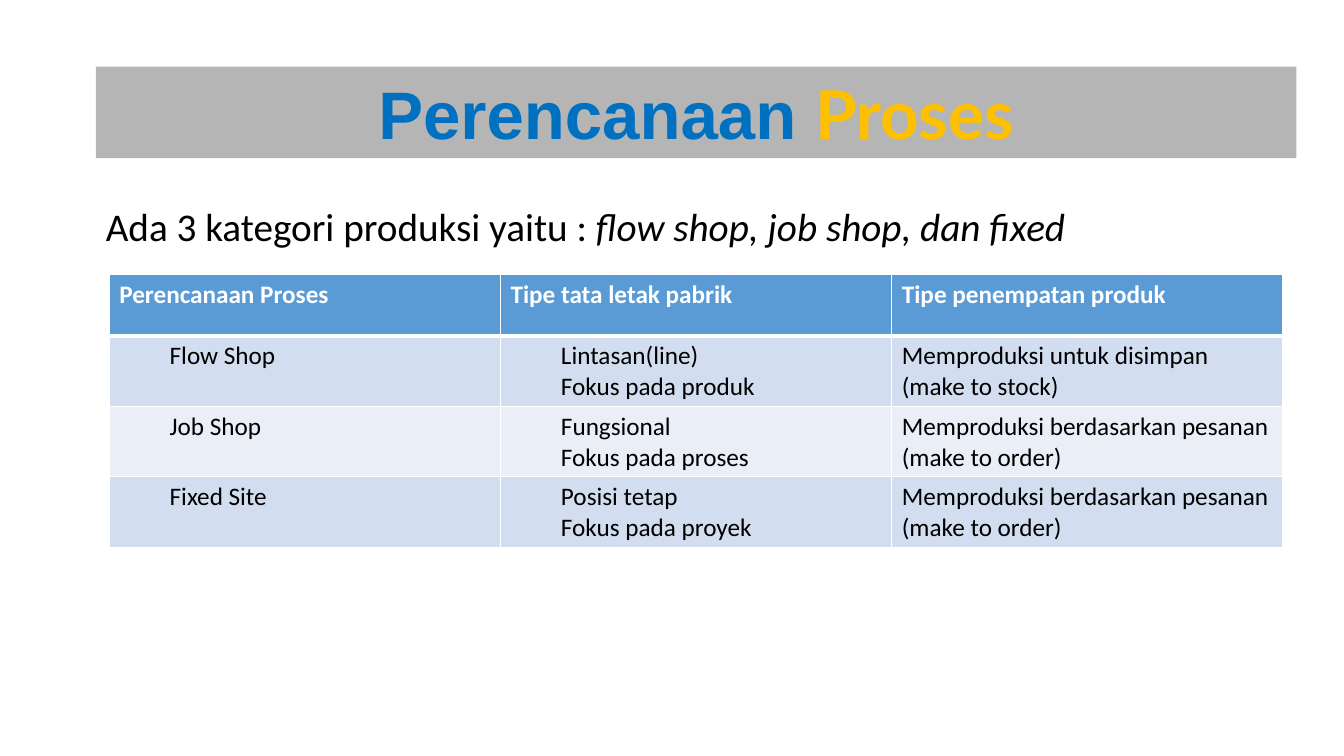
import dataclasses

import lxml.etree
import pptx
import pptx.dml.color
import pptx.enum.shapes
import pptx.enum.text
import pptx.oxml.ns
import pptx.util


@dataclasses.dataclass(frozen=True)
class Theme:
    black: str = "000000"
    white: str = "FFFFFF"
    blue: str = "0070C0"
    gold: str = "FFC000"
    header: str = "5B9BD5"
    bands: tuple = ("D2DEEF", "EAEFF7")
    title_size: int = 48
    lead_size: int = 28
    table_size: int = 18
    title_font: str = "Arial"
    accent_font: str = "Lato"
    body_font: str = "Calibri"


class SlideBuilder:
    def __init__(self, page, theme):
        self.page = page
        self.theme = theme

    def color(self, value):
        return pptx.dml.color.RGBColor.from_string(value)

    def frame(self, left, top, width, height):
        return [pptx.util.Pt(length) for length in (left, top, width, height)]

    def span(self, para, text, size, color, font=None, bold=False, italic=False):
        span = para.add_run()
        span.text = text
        span.font.name = font or self.theme.body_font
        span.font.size = pptx.util.Pt(size)
        span.font.color.rgb = self.color(color)
        span.font.bold = bold
        span.font.italic = italic

    def banner(self, place, fill, opacity):
        box = self.page.shapes.add_shape(
            pptx.enum.shapes.MSO_SHAPE.RECTANGLE, *self.frame(*place))
        box.shadow.inherit = False
        box.line.fill.background()
        box.fill.solid()
        box.fill.fore_color.rgb = self.color(fill)
        tint = box.fill._xPr.find(".//" + pptx.oxml.ns.qn("a:srgbClr"))
        alpha = lxml.etree.SubElement(tint, pptx.oxml.ns.qn("a:alpha"))
        alpha.set("val", str(opacity * 1000))
        para = box.text_frame.paragraphs[0]
        para.alignment = pptx.enum.text.PP_ALIGN.CENTER
        return para

    def text(self, place):
        box = self.page.shapes.add_textbox(*self.frame(*place))
        box.text_frame.word_wrap = False
        return box.text_frame.paragraphs[0]

    def border(self, cell, side, width):
        line = lxml.etree.SubElement(
            cell._tc.get_or_add_tcPr(), pptx.oxml.ns.qn("a:" + side))
        line.set("w", str(pptx.util.Pt(width)))
        fill = lxml.etree.SubElement(line, pptx.oxml.ns.qn("a:solidFill"))
        tint = lxml.etree.SubElement(fill, pptx.oxml.ns.qn("a:srgbClr"))
        tint.set("val", self.theme.white)

    def cell(self, cell, lines, row, indented):
        header = row == 0
        for side in ("lnL", "lnR", "lnT", "lnB"):
            thick = (row, side) in ((0, "lnB"), (1, "lnT"))
            self.border(cell, side, 3 if thick else 1)
        cell.fill.solid()
        cell.fill.fore_color.rgb = self.color(
            self.theme.header if header else self.theme.bands[(row - 1) % 2])
        for index, line in enumerate(lines):
            para = cell.text_frame.paragraphs[0] if index == 0 else cell.text_frame.add_paragraph()
            if indented:
                para.level = 1
                properties = para._p.get_or_add_pPr()
                properties.set("marL", str(pptx.util.Pt(36)))
                properties.set("indent", "0")
            self.span(para, line, self.theme.table_size,
                      self.theme.white if header else self.theme.black, bold=header)

    def table(self, place, rows, heights):
        table = self.page.shapes.add_table(
            len(rows), len(rows[0]), *self.frame(*place)).table
        for row, (texts, height) in enumerate(zip(rows, heights)):
            table.rows[row].height = pptx.util.Pt(height)
            for column, text in enumerate(texts):
                self.cell(table.cell(row, column), text.split("\n"), row,
                          row > 0 and column < 2)


def main():
    deck = pptx.Presentation()
    deck.slide_width = pptx.util.Pt(960)
    deck.slide_height = pptx.util.Pt(540)
    theme = Theme()
    builder = SlideBuilder(deck.slides.add_slide(deck.slide_layouts[6]), theme)

    title = builder.banner((68.5, 47.5, 857.5, 65.5), theme.black, 29)
    builder.span(title, "Perencanaan ", theme.title_size, theme.blue, theme.title_font, bold=True)
    builder.span(title, "Proses", theme.title_size, theme.gold, theme.accent_font, bold=True)

    lead = builder.text((68.5, 141, 718.5, 41))
    builder.span(lead, "Ada 3 kategori produksi yaitu : ", theme.lead_size, theme.black)
    builder.span(lead, "flow shop, job shop, dan fixed", theme.lead_size, theme.black, italic=True)

    made_to_order = "Memproduksi berdasarkan pesanan (make to order)"
    rows = [
        ("Perencanaan Proses", "Tipe tata letak pabrik", "Tipe penempatan produk"),
        ("Flow Shop", "Lintasan(line)\nFokus pada produk",
         "Memproduksi untuk disimpan (make to stock)"),
        ("Job Shop", "Fungsional\nFokus pada proses", made_to_order),
        ("Fixed Site", "Posisi tetap\nFokus pada proyek", made_to_order),
    ]
    builder.table((78, 196, 838.5, 195), rows, [43.8] + [50.4] * 3)
    deck.save("out.pptx")


if __name__ == "__main__":
    main()
